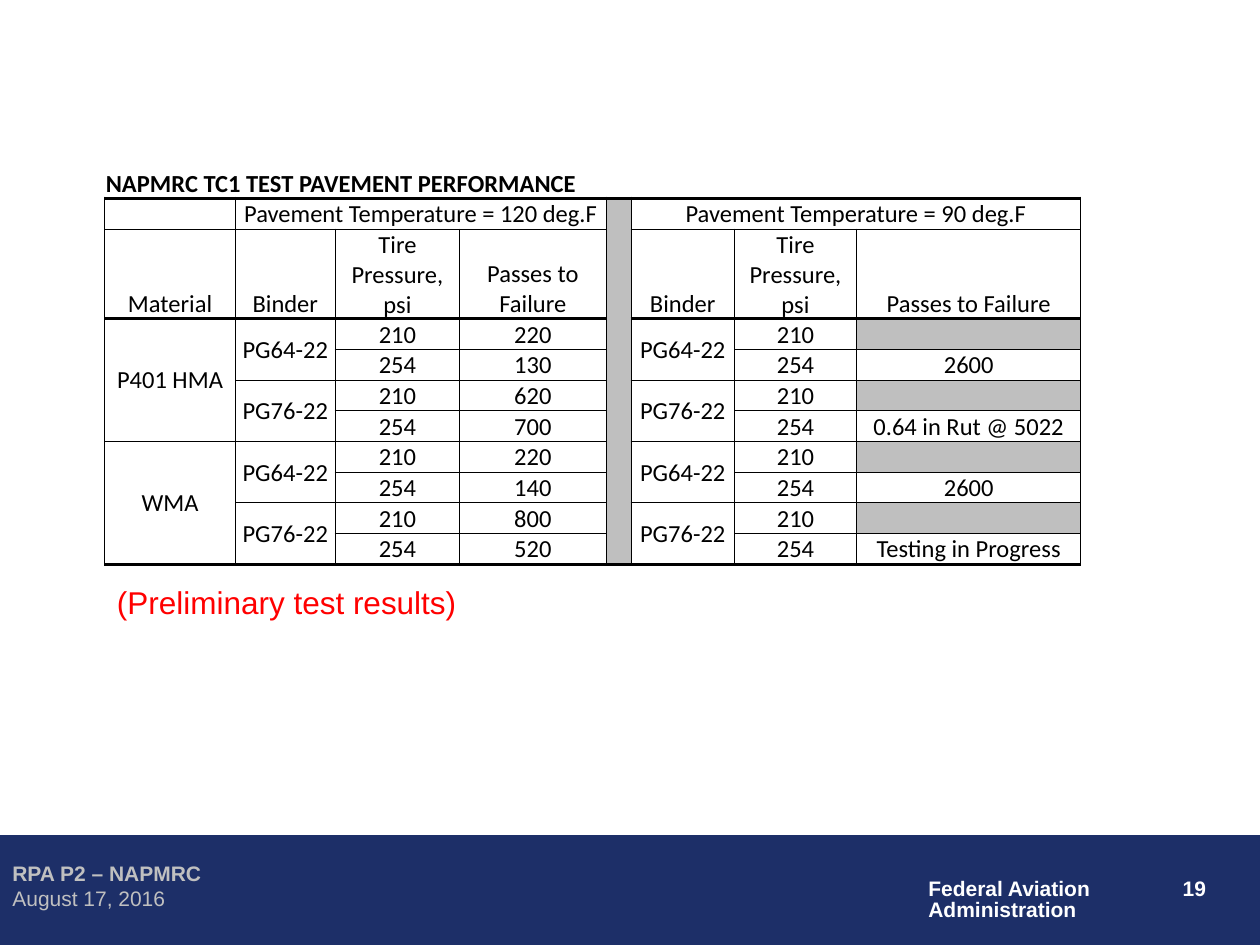
from dataclasses import dataclass, field

from lxml.etree import SubElement
from pptx import Presentation
from pptx.dml.color import RGBColor as RGB
from pptx.enum.shapes import MSO_SHAPE as SHAPE
from pptx.enum.text import MSO_ANCHOR as ANCHOR, PP_ALIGN as ALIGN
from pptx.oxml.ns import qn
from pptx.util import Inches, Pt

COLS, ROWS = 100, 75
UNIT = Inches(10) // COLS


@dataclass
class Theme:
    """Colours and type styles of the slide."""
    navy: RGB = RGB.from_string("1D2F68")
    gray: RGB = RGB.from_string("BFBFBF")
    rule: str = "000000"
    thin: float = 0.5
    heavy: float = 2
    styles: dict = field(default_factory=lambda: {
        "cell": ("000000", {"size": Pt(14), "name": "Calibri", "bold": False}),
        "heading": ("000000", {"size": Pt(14), "name": "Calibri", "bold": True}),
        "note": ("FF0000", {"size": Pt(18), "name": "Arial", "bold": False}),
        "agency": ("FFFFFF", {"size": Pt(12), "name": "Arial", "bold": True}),
        "event": ("C0C0C0", {"size": Pt(12), "name": "Arial", "bold": True}),
        "date": ("C0C0C0", {"size": Pt(12), "name": "Arial", "bold": False}),
    })


@dataclass
class Box:
    """A region in grid columns and rows."""
    x: float
    y: float
    w: float
    h: float

    def inner(self, x, y, w, h):
        """Return a box placed relative to this one."""
        return Box(self.x + x, self.y + y, w, h)

    def emu(self):
        """Return left, top, width and height as lengths."""
        return [round(v * UNIT) for v in (self.x, self.y, self.w, self.h)]


THEME = Theme()


def assign(obj, values):
    """Set attributes from a dict."""
    for name, value in values.items():
        setattr(obj, name, value)


def style_font(font, style):
    """Apply a named type style."""
    color, values = THEME.styles[style]
    assign(font, values)
    font.color.rgb = RGB.from_string(color)


def add_text(s, box, lines, style, wrap=True, **fmt):
    """Place a text box with one paragraph a line."""
    tf = s.shapes.add_textbox(*box.emu()).text_frame
    tf.word_wrap = wrap
    for i, line in enumerate(lines):
        p = tf.add_paragraph() if i else tf.paragraphs[0]
        r = p.add_run()
        r.text = line
        style_font(r.font, style)
        assign(p, fmt)


def add_footer(s, box):
    """Draw the footer band with event, agency and page number."""
    sp = s.shapes.add_shape(SHAPE.RECTANGLE, *box.emu())
    sp.shadow.inherit = False
    sp.fill.solid()
    sp.fill.fore_color.rgb = sp.line.color.rgb = THEME.navy
    sp.line.width = Pt(0.75)
    add_text(s, box.inner(75.9, 2.7, 20.8, 5), ["19"], "agency", alignment=ALIGN.RIGHT)
    add_text(s, box.inner(72.7, 3, 15, 4.4), ["Federal Aviation", "Administration"],
             "agency", wrap=False, line_spacing=0.85)
    add_text(s, box.inner(0, 1.5, 64.4, 3), ["RPA P2 – NAPMRC"], "event")
    add_text(s, box.inner(0, 3.5, 40.9, 3), ["August 17, 2016"], "date")


def table_content():
    """Return cell texts and spans keyed by row and column."""
    texts = {(0, 0): "NAPMRC TC1 TEST PAVEMENT PERFORMANCE",
             (1, 1): "Pavement Temperature = 120 deg.F",
             (1, 5): "Pavement Temperature = 90 deg.F",
             (2, 0): "Material", (3, 0): "P401 HMA", (7, 0): "WMA"}
    spans = {(0, 0): (1, 4), (0, 6): (1, 2), (1, 1): (1, 3), (1, 5): (1, 4),
             (2, 5): (1, 2), (3, 0): (4, 1), (7, 0): (4, 1), (11, 5): (1, 2)}
    for cols in ((1, 2, 3), (5, 7, 8)):
        for col, head in zip(cols, ("Binder", "Tire Pressure, psi", "Passes to Failure")):
            texts[2, col] = head
        for i in range(4):
            row = 3 + 2 * i
            texts[row, cols[0]] = ("PG64-22", "PG76-22")[i % 2]
            spans[row, cols[0]] = (2, cols[1] - cols[0])
            texts[row, cols[1]], texts[row + 1, cols[1]] = "210", "254"
    for i, passes in enumerate((220, 130, 620, 700, 220, 140, 800, 520)):
        texts[3 + i, 3] = str(passes)
    for i, passes in enumerate(("2600", "0.64 in Rut @ 5022", "2600", "Testing in Progress")):
        texts[4 + 2 * i, 8] = passes
    return texts, spans


def row_edge(edge, col):
    """Return the weight of the horizontal rule above row number edge."""
    if col == 9 or edge in (0, 12):
        return 0
    if edge in (1, 11):
        return THEME.heavy
    if col == 4:
        return 0
    return THEME.heavy if edge == 3 else THEME.thin


def col_edge(row):
    """Return the weight of the vertical rules in a row."""
    return THEME.thin if 1 <= row <= 10 else 0


def set_borders(cell, row, col, height, width):
    """Draw the four rules around a cell."""
    weights = {"a:lnL": col_edge(row),
               "a:lnR": col_edge(row) if col + width < 10 else 0,
               "a:lnT": row_edge(row, col),
               "a:lnB": row_edge(row + height, col)}
    pr = cell._tc.get_or_add_tcPr()
    for i, (tag, weight) in enumerate(weights.items()):
        ln = pr.makeelement(qn(tag), {"w": str(int(Pt(weight)))})
        pr.insert(i, ln)
        if weight:
            fill = SubElement(ln, qn("a:solidFill"))
            SubElement(fill, qn("a:srgbClr"), val=THEME.rule)
        else:
            SubElement(ln, qn("a:noFill"))


def fill_cell(cell, row, col, text):
    """Format one cell and write its text."""
    merged_rows = 3 <= row <= 10 and col in (0, 1, 5)
    assign(cell, {"margin_left": Inches(0.01), "margin_right": Inches(0.01),
                  "margin_top": Inches(0.01), "margin_bottom": 0,
                  "vertical_anchor": ANCHOR.MIDDLE if merged_rows else ANCHOR.BOTTOM})
    divider = col == 4 and 1 <= row <= 10
    untested = col == 8 and row in (3, 5, 7, 9)
    if divider or untested:
        cell.fill.solid()
        cell.fill.fore_color.rgb = THEME.gray
    else:
        cell.fill.background()
    p = cell.text_frame.paragraphs[0]
    p.alignment = ALIGN.CENTER if row else ALIGN.LEFT
    style = "cell" if row else "heading"
    style_font(p.font, style)
    if text:
        r = p.add_run()
        r.text = text
        style_font(r.font, style)


def add_results(s, box):
    """Place the pavement performance table."""
    widths = (10.4, 7.9, 9.9, 11.6, 2, 6, 2.2, 9.7, 17.8, 2.8)
    table = s.shapes.add_table(12, len(widths), *box.emu()).table
    assign(table, {"first_row": False, "horz_banding": False})
    for column, width in zip(table.columns, widths):
        column.width = round(width * UNIT)
    for i, line in enumerate(table.rows):
        line.height = round((2.1 if 4 <= i <= 9 else 2.2) * UNIT)
    texts, spans = table_content()
    for (row, col), (height, width) in spans.items():
        table.cell(row, col).merge(table.cell(row + height - 1, col + width - 1))
    for row in range(12):
        for col in range(len(widths)):
            cell = table.cell(row, col)
            fill_cell(cell, row, col, texts.get((row, col)))
            if not cell.is_spanned:
                set_borders(cell, row, col, *spans.get((row, col), (1, 1)))


def add_note(s, box):
    """Place the remark below the table."""
    add_text(s, box, ["(Preliminary test results)"], "note")


def main():
    """Build and save the slide."""
    prs = Presentation()
    assign(prs, {"slide_width": COLS * UNIT, "slide_height": ROWS * UNIT})
    s = prs.slides.add_slide(prs.slide_layouts[6])
    page = Box(0, 0, COLS, ROWS)
    add_footer(s, page.inner(0, 66.3, COLS, 8.9))
    add_results(s, page.inner(8.3, 13.3, 80.3, 34.6))
    add_note(s, page.inner(8.3, 45.8, 47.5, 4))
    prs.save("out.pptx")


if __name__ == "__main__":
    main()
